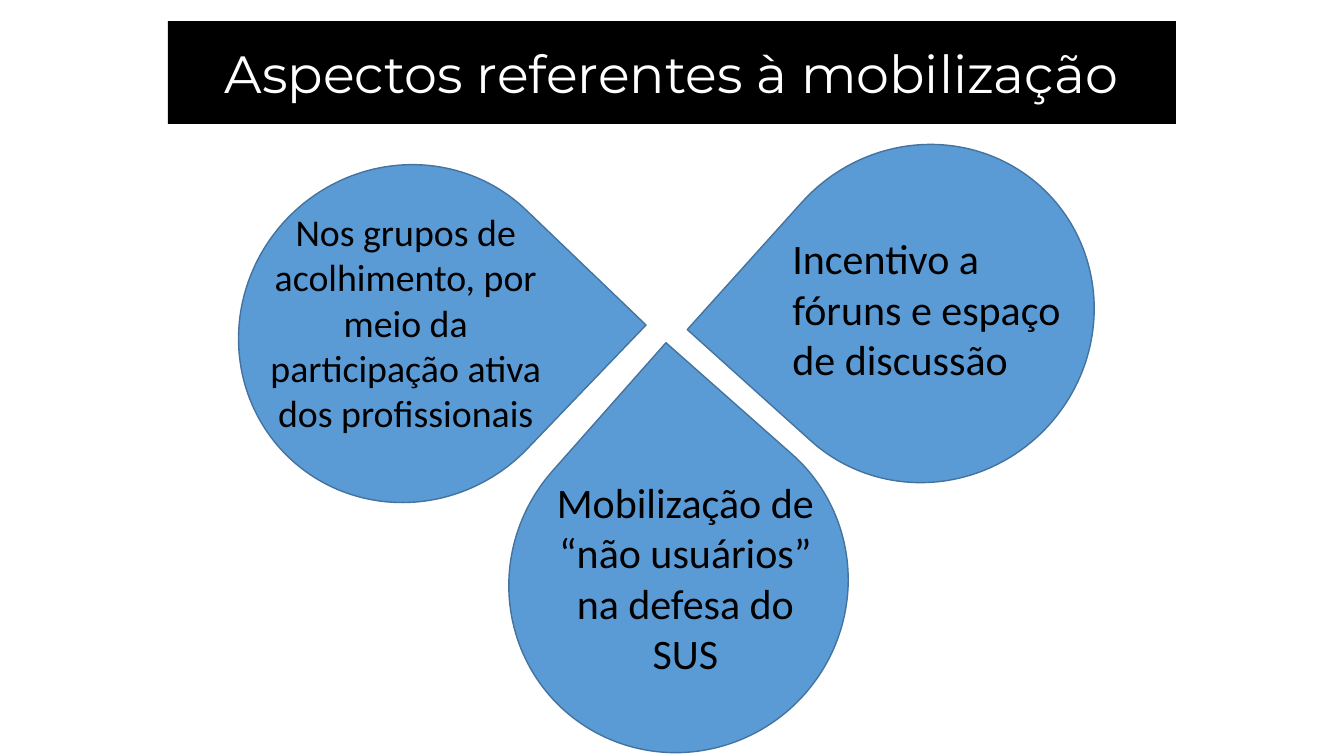
from dataclasses import dataclass

from pptx import Presentation
from pptx.dml.color import RGBColor
from pptx.enum.shapes import MSO_SHAPE as Preset
from pptx.enum.text import MSO_ANCHOR as Anchor, MSO_AUTO_SIZE as AutoSize, PP_ALIGN as Align
from pptx.util import Inches, Pt


@dataclass(frozen=True)
class Theme:
    banner: str = "000000"
    banner_text: str = "FFFFFF"
    petal: str = "5B9BD5"
    petal_edge: str = "43739E"
    body_text: str = "000000"
    title_font: str = "Montserrat"
    body_font: str = "Calibri"
    title_size: float = 37.4
    body_size: float = 30
    small_size: float = 27


@dataclass(frozen=True)
class Box:
    left: float
    top: float
    width: float
    height: float

    def inner(self, dx, dy, width, height):
        """Box given as shares of this one."""
        return Box(self.left + dx * self.width, self.top + dy * self.height,
                   width * self.width, height * self.height)

    def emu(self):
        return [Inches(v) for v in (self.left, self.top, self.width, self.height)]


THEME = Theme()
SLIDE = Box(0, 0, 13.33, 7.5)

# Each petal: its box, turn in degrees, share of the box for its words, words, format
PETALS = [
    (Box(5.03, 4.11, 3.4, 3.34), 311.5, (0.09, 0.17, 0.86, 0.79),
     "Mobilização de “não usuários” na defesa do SUS", {}),
    (Box(7.53, 1.41, 3.3, 3.4), 222, (0.07, 0.25, 0.91, 0.62),
     "Incentivo a fóruns e espaço de discussão", {"align": Align.LEFT}),
    (Box(2.39, 1.61, 3.3, 3.4), 43.8, (0.03, 0.12, 0.93, 0.7),
     "Nos grupos de acolhimento, por meio da participação ativa dos profissionais",
     {"size": THEME.small_size}),
]


def write(frame, words, font=THEME.body_font, size=THEME.body_size,
          color=THEME.body_text, align=Align.CENTER, anchor=Anchor.TOP):
    frame.word_wrap = True
    frame.auto_size = AutoSize.NONE
    frame.vertical_anchor = anchor
    paragraph = frame.paragraphs[0]
    paragraph.alignment = align
    run = paragraph.add_run()
    run.text = words
    run.font.name = font
    run.font.size = Pt(size)
    run.font.color.rgb = RGBColor.from_string(color)


def add_banner(slide, box, words):
    banner = slide.shapes.title
    banner.left, banner.top, banner.width, banner.height = box.emu()
    banner.fill.solid()
    banner.fill.fore_color.rgb = RGBColor.from_string(THEME.banner)
    write(banner.text_frame, words, font=THEME.title_font, size=THEME.title_size,
          color=THEME.banner_text, anchor=Anchor.MIDDLE)


def add_petal(slide, box, turn, words_share, words, words_format):
    petal = slide.shapes.add_shape(Preset.TEAR, *box.emu())
    petal.rotation = turn
    petal.shadow.inherit = False
    petal.fill.solid()
    petal.fill.fore_color.rgb = RGBColor.from_string(THEME.petal)
    petal.line.color.rgb = RGBColor.from_string(THEME.petal_edge)
    petal.line.width = Pt(1)
    # Words stay upright in a box of their own
    caption = slide.shapes.add_textbox(*box.inner(*words_share).emu())
    write(caption.text_frame, words, **words_format)


def main():
    deck = Presentation()
    deck.slide_width, deck.slide_height = Inches(SLIDE.width), Inches(SLIDE.height)
    slide = deck.slides.add_slide(deck.slide_layouts.get_by_name("Title Only"))

    # Title banner
    add_banner(slide, SLIDE.inner(0.125, 0.028, 0.75, 0.136),
               "Aspectos referentes à mobilização")

    # Three petals whose tips meet
    for petal in PETALS:
        add_petal(slide, *petal)

    deck.save("out.pptx")


if __name__ == "__main__":
    main()
